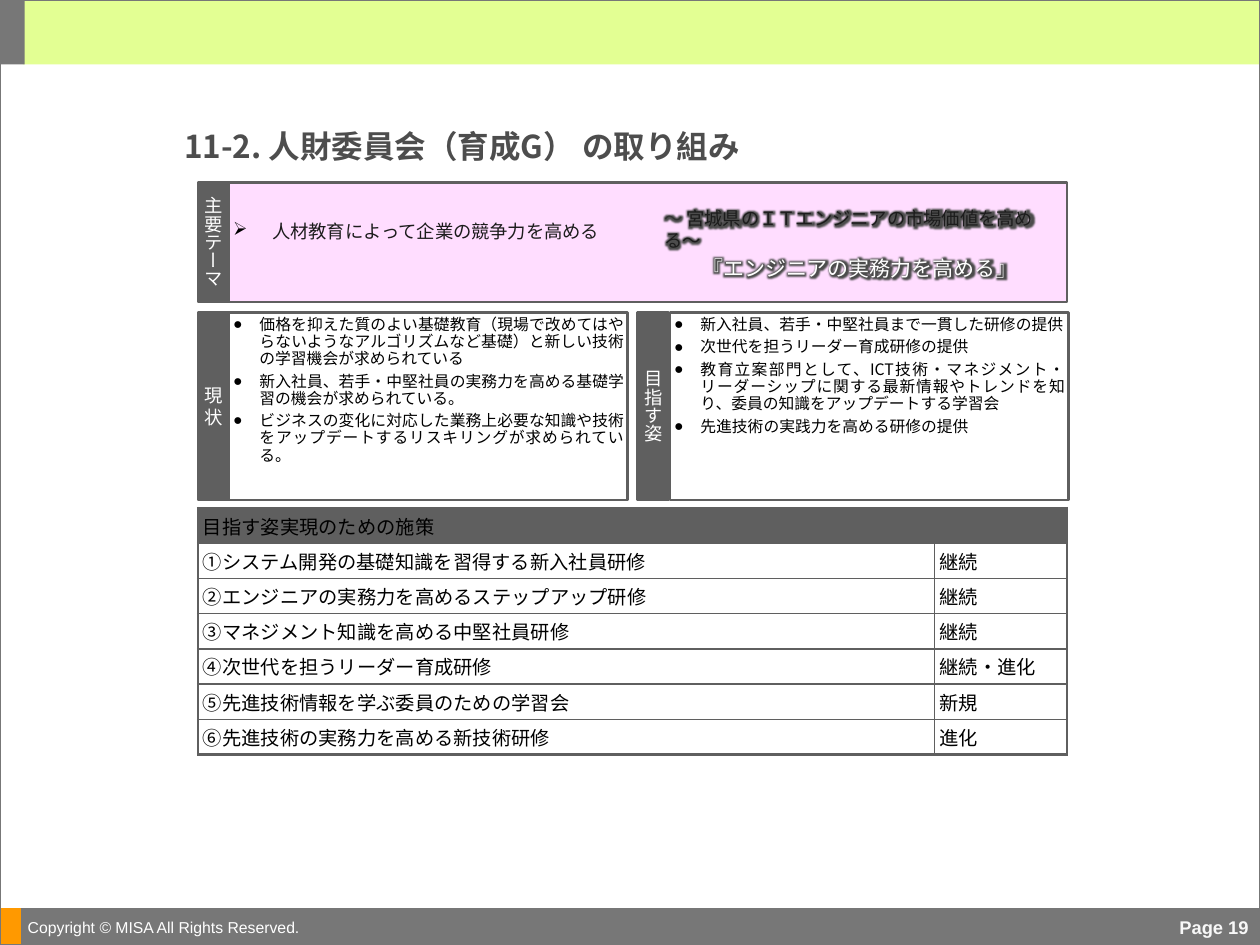
from typing import NamedTuple

from lxml.etree import SubElement as Sub
from pptx import Presentation
from pptx.dml.color import RGBColor
from pptx.enum.shapes import MSO_SHAPE as Kind
from pptx.enum.text import MSO_ANCHOR as Anchor
from pptx.enum.text import MSO_AUTO_SIZE as Auto
from pptx.enum.text import PP_ALIGN as Align
from pptx.oxml.ns import qn
from pptx.util import Cm, Pt

SANS, LATIN = "Noto Sans CJK JP", "Arial"
DARK, GREY, INK, BLACK, WHITE = "5F5F5F", "777777", "1C1C1C", "000000", "FFFFFF"
THIN = (0.08, 0.08, 0.08, 0.08)


class Box(NamedTuple):
    left: float
    top: float
    width: float
    height: float


class Bar(NamedTuple):
    box: Box
    fill: str | None
    line: str | None = None
    weight: float = 0.75


class Run(NamedTuple):
    text: str
    size: float
    color: str
    bold: bool = False
    face: str = SANS
    glow: bool = False


class Para(NamedTuple):
    runs: list[Run]
    form: dict = {}
    bullet: str = ""
    indent: float = 0


class Plan(NamedTuple):
    name: str
    state: str


def tint(code: str) -> RGBColor:
    return RGBColor.from_string(code)


def place(shape, box: Box) -> None:
    for name, value in box._asdict().items():
        setattr(shape, name, Cm(value))


def add_run(para, item: Run) -> None:
    run = para.add_run()
    run.text = item.text
    for name, value in {"size": Pt(item.size), "bold": item.bold, "name": item.face}.items():
        setattr(run.font, name, value)
    run.font.color.rgb = tint(item.color)
    props = run.font._element
    Sub(props, qn("a:ea"), typeface=item.face)
    if item.glow:
        fx = Sub(props, qn("a:effectLst"))
        halo = Sub(fx, qn("a:glow"), rad="101600")
        Sub(halo, qn("a:srgbClr"), val="4D4D4D")
        props.find(qn("a:latin")).addprevious(fx)


def write(frame, paras: list[Para], inset=THIN, anchor=Anchor.MIDDLE, wrap=True) -> None:
    sides = zip(("left", "top", "right", "bottom"), inset)
    form = {f"margin_{side}": Cm(gap) for side, gap in sides}
    form |= {"auto_size": Auto.NONE, "word_wrap": wrap, "vertical_anchor": anchor}
    for name, value in form.items():
        setattr(frame, name, value)
    for i, item in enumerate(paras):
        para = frame.add_paragraph() if i else frame.paragraphs[0]
        for name, value in ({"space_before": Pt(0)} | item.form).items():
            setattr(para, name, value)
        props = para._p.get_or_add_pPr()
        props.set("hangingPunct", "0")  # keep punctuation inside the box
        if item.bullet:
            props.set("marL", str(Cm(item.indent)))
            props.set("indent", str(-Cm(item.indent)))
            Sub(Sub(props, qn("a:buClr")), qn("a:srgbClr"), val=BLACK)
            Sub(props, qn("a:buChar"), char=item.bullet)
        for run in item.runs:
            add_run(para, run)


def edge(shape, color: str | None, weight: float) -> None:
    if color:
        shape.line.color.rgb = tint(color)
        shape.line.width = Pt(weight)
    else:
        shape.line.fill.background()


def add_bar(slide, bar: Bar):
    shape = slide.shapes.add_shape(Kind.RECTANGLE, *map(Cm, bar.box))
    shape.shadow.inherit = False
    if bar.fill:
        shape.fill.solid()
        shape.fill.fore_color.rgb = tint(bar.fill)
    else:
        shape.fill.background()
    edge(shape, bar.line, bar.weight)
    return shape


def add_label(slide, box: Box, text: str) -> None:
    shape = add_bar(slide, Bar(box, DARK, DARK, 1.5))
    write(shape.text_frame, [Para([Run(text, 10.5, WHITE)], {"alignment": Align.CENTER})])
    for name, value in {"vert": "eaVert", "anchorCtr": "1"}.items():
        shape.text_frame._txBody.bodyPr.set(name, value)


def add_text(slide, box: Box, paras: list[Para], **form) -> None:
    write(slide.shapes.add_textbox(*map(Cm, box)).text_frame, paras, **form)


def fill_list(holder, box: Box, items: list[str]) -> None:
    place(holder, box)
    edge(holder, DARK, 1.5)
    form = {"alignment": Align.JUSTIFY, "line_spacing": Pt(9.8), "space_after": Pt(3)}
    paras = [Para([Run(item, 9, BLACK)], form, "●", 0.53) for item in items]
    write(holder.text_frame, paras, anchor=Anchor.TOP)


def fill_cell(cell, text: str, fill: str | None, bold: set[str]) -> None:
    if fill:
        cell.fill.solid()
        cell.fill.fore_color.rgb = tint(fill)
    else:
        cell.fill.background()
    props = cell._tc.get_or_add_tcPr()
    for spot, side in enumerate("LRTB"):
        line = Sub(props, qn(f"a:ln{side}"), w=str(Pt(1.5 if side in bold else 1)))
        Sub(Sub(line, qn("a:solidFill")), qn("a:srgbClr"), val=DARK)
        props.insert(spot, line)
    if text:
        write(cell.text_frame, [Para([Run(text, 11, BLACK)], {"alignment": Align.JUSTIFY})])
    cell.margin_left = cell.margin_right = Cm(0.1)
    cell.margin_top = cell.margin_bottom = Cm(0.07)
    cell.vertical_anchor = Anchor.MIDDLE


def add_plans(slide, box: Box, head: str, plans: list[Plan]) -> None:
    rows = [Plan(head, "")] + plans
    table = slide.shapes.add_table(len(rows), 2, *map(Cm, box)).table
    table.first_row = table.horz_banding = False
    for col, width in zip(table.columns, (14.85, 2.67)):
        col.width = Cm(width)
    table.cell(0, 0).merge(table.cell(0, 1))
    for r, plan in enumerate(rows):
        table.rows[r].height = Cm(box.height / len(rows))
        for c, text in enumerate(plan):
            bold = {"LR"[c]} | ({"T"} if r < 2 else set())
            bold |= {"B"} if r in (0, len(rows) - 1) else set()
            fill_cell(table.cell(r, c), text, None if r else DARK, bold)


BARS = [
    Bar(Box(0.46, 0, 24.94, 1.3), "E3FF93"),
    Bar(Box(0.41, 18.31, 24.99, 0.74), GREY, GREY),
    Bar(Box(0, 18.31, 0.41, 0.74), "FF9900", "FF9900"),
    Bar(Box(0, 0, 0.5, 1.3), GREY),
    Bar(Box(0, 0, 25.4, 19.05), None, GREY),
    Bar(Box(4.62, 3.68, 16.89, 2.41), "FFDDFF", DARK, 1.5),
]
LABELS = [
    (Box(3.99, 3.68, 0.63, 2.41), "主要テーマ"),
    (Box(3.99, 6.3, 0.63, 3.78), "現 状"),
    (Box(12.85, 6.3, 0.63, 3.78), "目指す姿"),
]
NOW = [
    "価格を抑えた質のよい基礎教育（現場で改めてはやらないようなアルゴリズムなど基礎）と新しい技術の学習機会が求められている",
    "新入社員、若手・中堅社員の実務力を高める基礎学習の機会が求められている。",
    "ビジネスの変化に対応した業務上必要な知識や技術をアップデートするリスキリングが求められている。",
]
GOAL = [
    "新入社員、若手・中堅社員まで一貫した研修の提供",
    "次世代を担うリーダー育成研修の提供",
    "教育立案部門として、ICT技術・マネジメント・リーダーシップに関する最新情報やトレンドを知り、委員の知識をアップデートする学習会",
    "先進技術の実践力を高める研修の提供",
]
PLANS = [
    Plan("①システム開発の基礎知識を習得する新入社員研修", "継続"),
    Plan("②エンジニアの実務力を高めるステップアップ研修", "継続"),
    Plan("③マネジメント知識を高める中堅社員研修", "継続"),
    Plan("④次世代を担うリーダー育成研修", "継続・進化"),
    Plan("⑤先進技術情報を学ぶ委員のための学習会", "新規"),
    Plan("⑥先進技術の実務力を高める新技術研修", "進化"),
]


def main() -> None:
    deck = Presentation()
    deck.slide_width, deck.slide_height = Cm(25.4), Cm(19.05)
    slide = deck.slides.add_slide(deck.slide_layouts[3])
    title, now, goal = list(slide.placeholders)[:3]
    for holder in list(slide.placeholders)[3:]:
        holder._element.getparent().remove(holder._element)

    # Title and the two lists
    place(title, Box(3.56, 2.39, 15.47, 0.97))
    head = Run("11-2. 人財委員会（育成G） の取り組み", 18, "4D4D4D", True)
    write(title.text_frame, [Para([head], {"alignment": Align.LEFT})], (0.15, 0.15, 0, 0))
    fill_list(now, Box(4.62, 6.3, 8.03, 3.78), NOW)
    fill_list(goal, Box(13.51, 6.3, 8.03, 3.78), GOAL)

    # Bands, frame and side labels
    for bar in BARS:
        add_bar(slide, bar)
    for box, text in LABELS:
        add_label(slide, box, text)

    # Footer
    note = Run("Copyright © MISA All Rights Reserved.", 9, WHITE, face=LATIN)
    add_text(slide, Box(0.36, 18.34, 8.26, 0.71), [Para([note])], inset=(0.2, 0, 0, 0), wrap=False)
    page = Run("Page 19", 10.5, "F8F8F8", True, LATIN)
    add_text(slide, Box(19.35, 18.34, 5.92, 0.71), [Para([page], {"alignment": Align.RIGHT})],
             inset=(0.1, 0, 0.1, 0))

    # Main theme and slogan
    theme = Run("人材教育によって企業の競争力を高める", 10.5, INK)
    add_text(slide, Box(4.62, 3.68, 8.69, 2.41),
             [Para([theme], {"line_spacing": Pt(12.8)}, "➢", 0.79)], inset=(0.08, 0.15, 0.08, 0.61))
    lead = [Run("～", 10.5, "333333", glow=True),
            Run(" 宮城県のＩＴエンジニアの市場価値を高める～", 10.5, INK, glow=True)]
    motto = Run("『エンジニアの実務力を高める』", 12, WHITE, glow=True)
    centre = {"alignment": Align.CENTER, "space_before": Pt(2.2)}
    add_text(slide, Box(13.31, 3.68, 8, 2.41), [Para(lead), Para([motto], centre)],
             inset=(0.08, 0.15, 0.04, 0.08))

    # Measures
    add_plans(slide, Box(3.99, 10.24, 17.52, 4.97), "目指す姿実現のための施策", PLANS)
    deck.save("out.pptx")


if __name__ == "__main__":
    main()
